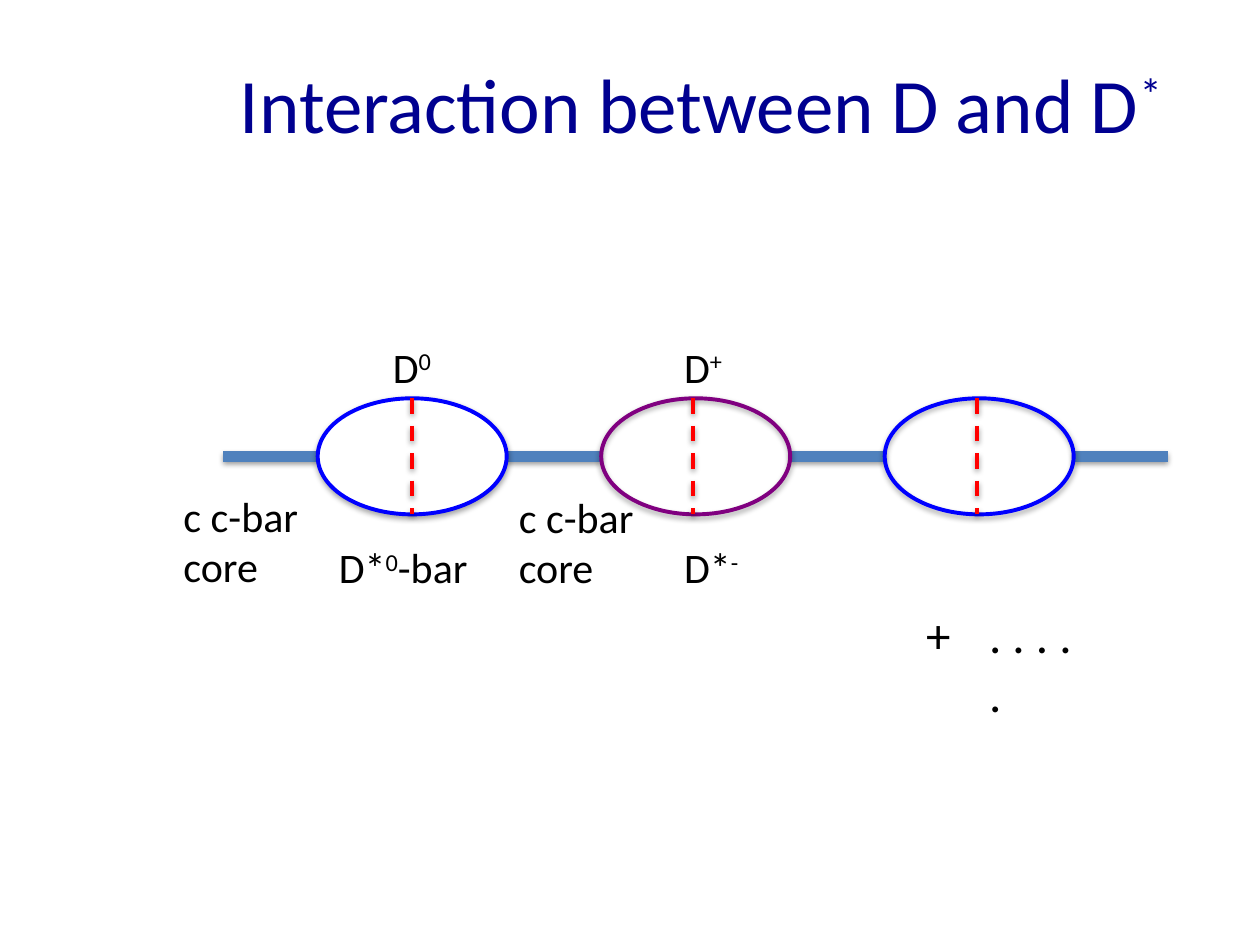
from lxml.etree import SubElement
from pptx import Presentation
from pptx.dml.color import RGBColor
from pptx.enum.dml import MSO_LINE as Dash
from pptx.enum.shapes import MSO_CONNECTOR as Link, MSO_SHAPE as Kind
from pptx.enum.text import MSO_ANCHOR as Anchor, PP_ALIGN as Align
from pptx.oxml.ns import qn
from pptx.util import Cm, Pt

BLUE, PURPLE, RED, STEEL = "0000FF", "800080", "FF0000", "4F81BD"
NAVY, BLACK, WHITE = "000090", "000000", "FFFFFF"

# Loop outline, fill, and shift of its exchange line from the centre (cm)
LOOPS = [(BLUE, WHITE, 0), (PURPLE, None, -0.05), (BLUE, None, -0.05)]

# Box relative to the chain (cm), size, wrap, runs as (text, raised)
LABELS = [
    ((-1.05, 1.73, 2.97, 2.31), 24, True, [("c c-bar core", False)]),
    ((5.71, 1.75, 2.97, 2.31), 24, True, [("c c-bar core", False)]),
    ((2.08, 2.77, 3.66, 1.27), 24, True,
     [("D*", False), ("0", True), ("-bar", False)]),
    ((3.17, -1.27, 1.32, 1.27), 24, False, [("D", False), ("0", True)]),
    ((9.04, -1.27, 1.5, 1.27), 24, False, [("D", False), ("+", True)]),
    ((9.04, 2.77, 1.7, 1.27), 24, False, [("D*", False), ("-", True)]),
    ((13.92, 4.04, 1.09, 1.45), 28, False, [("+", False)]),
    ((15.19, 4.04, 2.31, 1.45), 28, True, [(". . . . .", False)]),
]


def paint(part, color):
    part.rgb = RGBColor.from_string(color)


def shade(shape, alpha, dist):
    """Add a soft shadow straight below; call after fill and line are set."""
    effect = SubElement(shape._element.spPr, qn("a:effectLst"))
    cast = SubElement(effect, qn("a:outerShdw"), blurRad="40000",
                      dist=str(dist), dir="5400000", rotWithShape="0")
    tint = SubElement(cast, qn("a:srgbClr"), val=BLACK)
    SubElement(tint, qn("a:alpha"), val=str(alpha * 1000))


def add_line(slide, start, end, color, **form):
    line = slide.shapes.add_connector(
        Link.STRAIGHT, *(Cm(v) for v in (*start, *end)))
    paint(line.line.color, color)
    for name, value in form.items():
        setattr(line.line, name, value)
    shade(line, 38, 20000)


def add_loop(slide, box, color, fill):
    loop = slide.shapes.add_shape(Kind.OVAL, *(Cm(v) for v in box))
    if fill:
        loop.fill.solid()
        paint(loop.fill.fore_color, fill)
    else:
        loop.fill.background()
    paint(loop.line.color, color)
    loop.line.width = Pt(2.25)
    shade(loop, 35, 23000)


def add_text(slide, box, runs, size, color=BLACK, align=Align.LEFT, **form):
    frame = slide.shapes.add_textbox(*(Cm(v) for v in box)).text_frame
    for name, value in form.items():
        setattr(frame, name, value)
    para = frame.paragraphs[0]
    para.alignment = align
    for text, raised in runs:
        run = para.add_run()
        run.text = text
        for name, value in {"name": "Calibri", "size": Pt(size)}.items():
            setattr(run.font, name, value)
        paint(run.font.color, color)
        if raised:
            run._r.get_or_add_rPr().set("baseline", "30000")


def add_title(slide, box):
    add_text(slide, box, [("Interaction between D and D", False), ("*", True)],
             44, NAVY, Align.CENTER, word_wrap=True,
             vertical_anchor=Anchor.MIDDLE)


def add_chain(slide, box):
    """Draw loops joined by core lines, each line half a loop wide."""
    left, top, width, height = box
    lead = width / (3 * len(LOOPS) + 1)
    mid, low = top + height / 2, top + height
    starts = [left + 3 * lead * i for i in range(len(LOOPS) + 1)]
    for x in starts:
        add_line(slide, (x, mid), (x + lead, mid), STEEL, width=Pt(6))
    for x, (color, fill, shift) in zip(starts, LOOPS):
        add_loop(slide, (x + lead, top, 2 * lead, height), color, fill)
        axis = x + 2 * lead + shift
        add_line(slide, (axis, top), (axis, low), RED,
                 width=Pt(2.25), dash_style=Dash.DASH)
    for (dx, dy, *size), points, wrap, runs in LABELS:
        add_text(slide, (left + dx, top + dy, *size), runs, points,
                 word_wrap=wrap)


def main():
    deck = Presentation()
    deck.slide_width, deck.slide_height = Cm(25.4), Cm(19.05)
    slide = deck.slides.add_slide(deck.slide_layouts[6])
    add_title(slide, (3.45, 0.76, 21.36, 2.62))
    add_chain(slide, (4.5, 8.03, 19.05, 2.34))
    deck.save("out.pptx")


if __name__ == "__main__":
    main()
